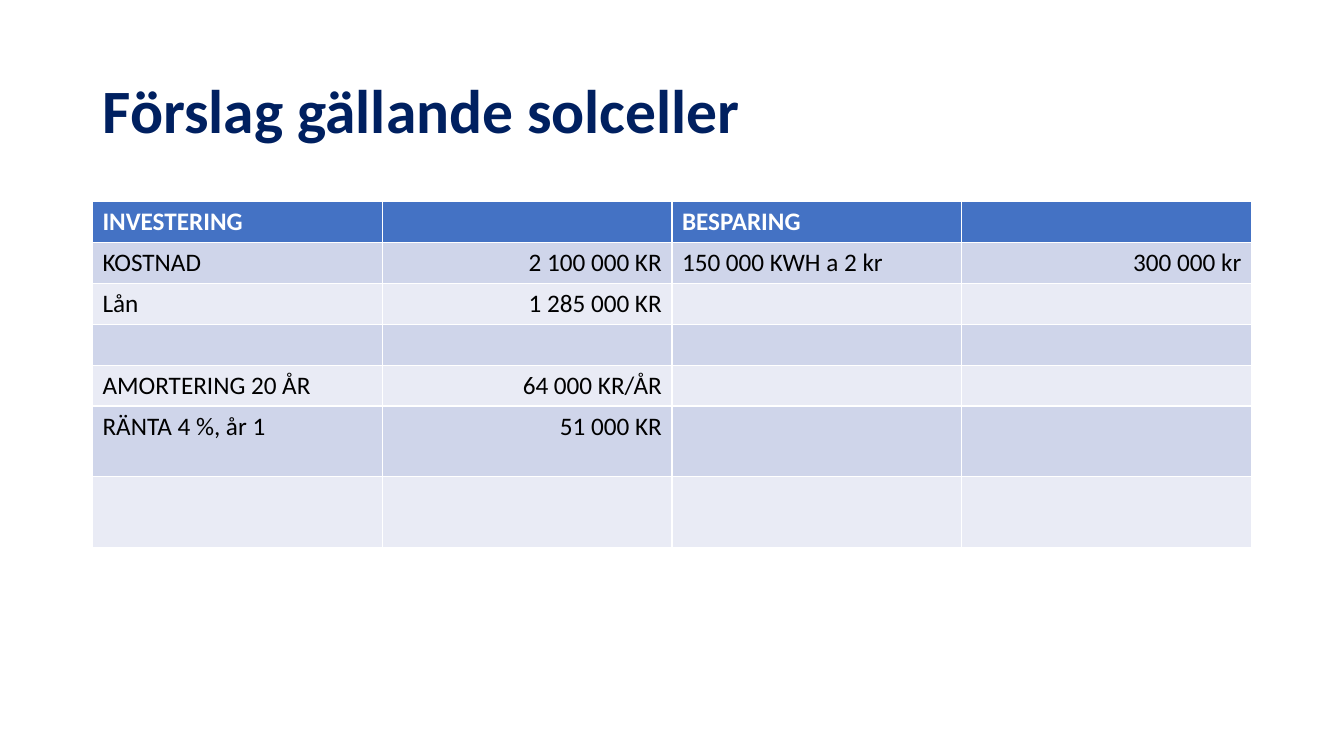
import pptx
import pptx.dml.color
import pptx.enum.text
import pptx.util

Cm = pptx.util.Cm
FONT = "Calibri"
LEFT, WIDTH = 2.33, 29.21
ROW_HEIGHTS = [1.03] * 5 + [1.78] * 2
ROWS = [
    ["INVESTERING", "", "BESPARING", ""],
    ["KOSTNAD", "2 100 000 KR", "150 000 KWH a 2 kr", "300 000 kr"],
    ["Lån", "1 285 000 KR", "", ""],
    ["", "", "", ""],
    ["AMORTERING 20 ÅR", "64 000 KR/ÅR", "", ""],
    ["RÄNTA 4 %, år 1", "51 000 KR", "", ""],
    ["", "", "", ""],
]


def color(value):
    return pptx.dml.color.RGBColor.from_string(value)


def style_font(font, size, value, bold):
    font.name = FONT
    font.size = pptx.util.Pt(size)
    font.color.rgb = color(value)
    font.bold = bold


def add_title(slide, left, top, width, height):
    title = slide.shapes.title
    title.left, title.top = Cm(left), Cm(top)
    title.width, title.height = Cm(width), Cm(height)
    frame = title.text_frame
    frame.text = "Förslag gällande solceller"
    frame.auto_size = pptx.enum.text.MSO_AUTO_SIZE.NONE
    frame.vertical_anchor = pptx.enum.text.MSO_ANCHOR.MIDDLE
    paragraph = frame.paragraphs[0]
    paragraph.alignment = pptx.enum.text.PP_ALIGN.LEFT
    paragraph.line_spacing = 0.9
    style_font(paragraph.font, 44, "002060", True)


def fill_cell(cell, text, row, column):
    header = row == 0
    cell.fill.solid()
    cell.fill.fore_color.rgb = color(
        "4472C4" if header else "CFD5EA" if row % 2 else "E9EBF5")
    cell.text = text
    paragraph = cell.text_frame.paragraphs[0]
    # Amounts stand in every second column
    if column % 2:
        paragraph.alignment = pptx.enum.text.PP_ALIGN.RIGHT
    style_font(paragraph.font, 18, "FFFFFF" if header else "000000", header)


def add_budget_table(slide, left, top, width):
    column_count = len(ROWS[0])
    table = slide.shapes.add_table(
        len(ROWS), column_count, Cm(left), Cm(top),
        Cm(width), Cm(sum(ROW_HEIGHTS))).table
    for column in table.columns:
        column.width = Cm(width / column_count)
    for row, texts in enumerate(ROWS):
        table.rows[row].height = Cm(ROW_HEIGHTS[row])
        for column, text in enumerate(texts):
            fill_cell(table.cell(row, column), text, row, column)


def main():
    presentation = pptx.Presentation()
    presentation.slide_width = Cm(33.87)
    presentation.slide_height = Cm(19.05)
    slide = presentation.slides.add_slide(presentation.slide_layouts[5])
    # Heading
    add_title(slide, LEFT, 1.01, WIDTH, 3.68)
    # Investment and savings
    add_budget_table(slide, LEFT, 5.08, WIDTH)
    presentation.save("out.pptx")


if __name__ == "__main__":
    main()
